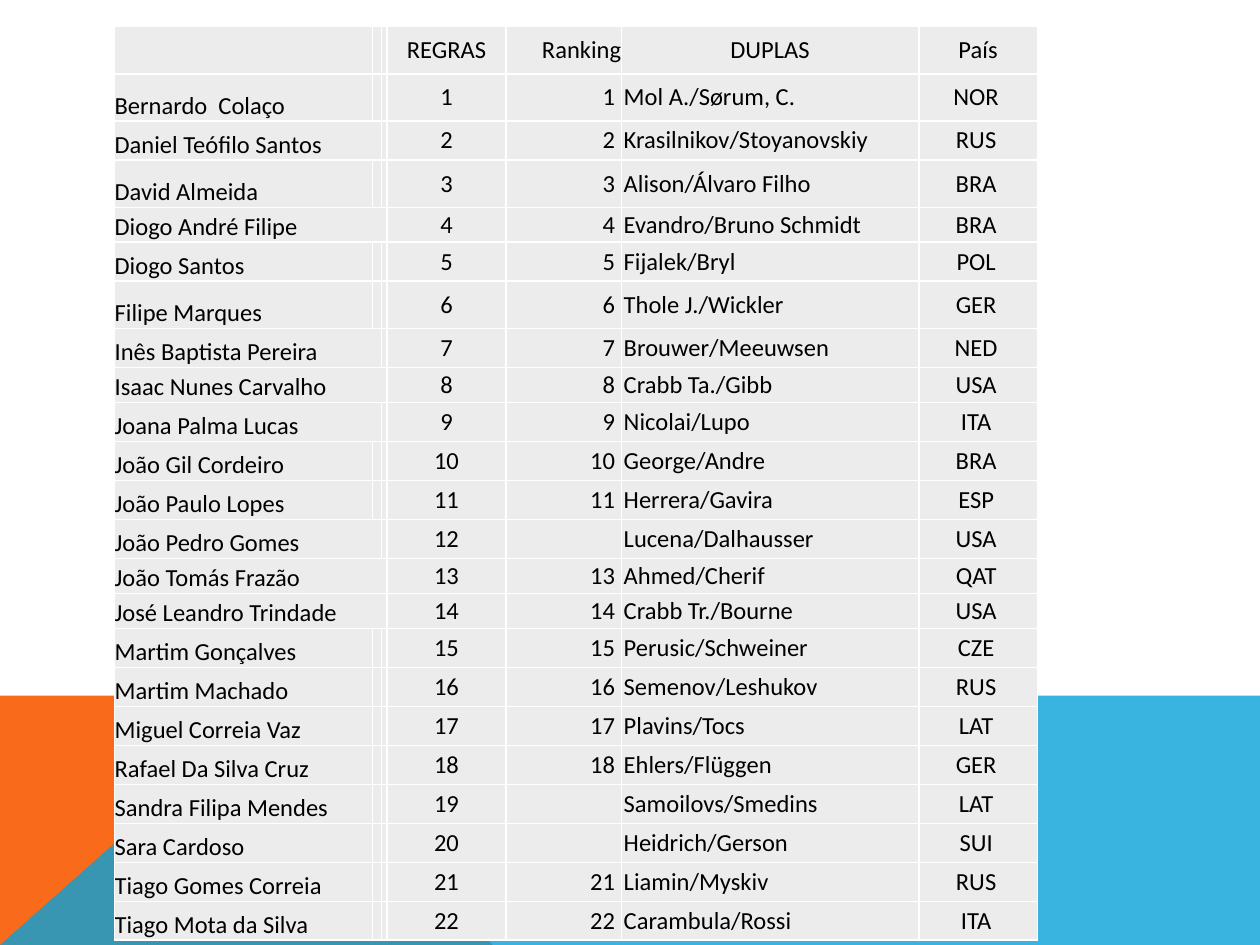
import pptx
import pptx.dml.color
import pptx.enum.text
import pptx.oxml
import pptx.oxml.ns
import pptx.util
from lxml import etree

Pt = pptx.util.Pt
qn = pptx.oxml.ns.qn
ALIGN = pptx.enum.text.PP_ALIGN
ANCHOR = pptx.enum.text.MSO_ANCHOR

ORANGE = pptx.dml.color.RGBColor(0xF9, 0x6A, 0x1B)
BLUE = pptx.dml.color.RGBColor(0x08, 0xA1, 0xD9)
GREY = pptx.dml.color.RGBColor(0xEC, 0xEC, 0xEC)
WHITE = pptx.dml.color.RGBColor(0xFF, 0xFF, 0xFF)
BLACK = pptx.dml.color.RGBColor(0, 0, 0)

# Page and band geometry, in points
PAGE_WIDTH, PAGE_HEIGHT = 720, 540
BAND_TOP = 397.5
PEAK_X = 160.5
ORANGE_END = 281.5

# Table geometry, in points
TABLE_LEFT, TABLE_TOP = 65.5, 15.2
COLUMN_WIDTHS = [147.4, 5.2, 3.2, 67.8, 66, 170, 67.8]
TALL, NORMAL, SHORT = 27, 22.3, 20
TALL_RULES = {1, 3, 6}
UNRANKED = {12, 19, 20}
FLUSH = (0, 0, 0, 0)
PADDED = (1.44, 1.44, 3.6, 1.44)

HEADERS = [
    ("REGRAS", ALIGN.CENTER),
    ("Ranking", ALIGN.RIGHT),
    ("DUPLAS", ALIGN.CENTER),
    ("País", ALIGN.CENTER),
]

# Student, columns the name spans, pair, country
ENTRIES = [
    ("Bernardo  Colaço", 1, "Mol A./Sørum, C.", "NOR"),
    ("Daniel Teófilo Santos", 2, "Krasilnikov/Stoyanovskiy", "RUS"),
    ("David Almeida", 1, "Alison/Álvaro Filho", "BRA"),
    ("Diogo André Filipe", 3, "Evandro/Bruno Schmidt", "BRA"),
    ("Diogo Santos", 1, "Fijalek/Bryl", "POL"),
    ("Filipe Marques", 1, "Thole J./Wickler", "GER"),
    ("Inês Baptista Pereira", 2, "Brouwer/Meeuwsen", "NED"),
    ("Isaac Nunes Carvalho", 3, "Crabb Ta./Gibb", "USA"),
    ("Joana Palma Lucas", 2, "Nicolai/Lupo", "ITA"),
    ("João Gil Cordeiro", 1, "George/Andre", "BRA"),
    ("João Paulo Lopes", 1, "Herrera/Gavira", "ESP"),
    ("João Pedro Gomes", 2, "Lucena/Dalhausser", "USA"),
    ("João Tomás Frazão", 3, "Ahmed/Cherif", "QAT"),
    ("José Leandro Trindade", 3, "Crabb Tr./Bourne", "USA"),
    ("Martim Gonçalves", 1, "Perusic/Schweiner", "CZE"),
    ("Martim Machado", 1, "Semenov/Leshukov", "RUS"),
    ("Miguel Correia Vaz", 1, "Plavins/Tocs", "LAT"),
    ("Rafael Da Silva Cruz", 1, "Ehlers/Flüggen", "GER"),
    ("Sandra Filipa Mendes", 1, "Samoilovs/Smedins", "LAT"),
    ("Sara Cardoso", 1, "Heidrich/Gerson", "SUI"),
    ("Tiago Gomes Correia", 1, "Liamin/Myskiv", "RUS"),
    ("Tiago Mota da Silva", 1, "Carambula/Rossi", "ITA"),
]


class SlideBuilder:
    """Holds the style and the current slide."""

    font = "Calibri"
    size = 14
    border = 1

    def __init__(self, slide):
        self.slide = slide

    def polygon(self, points, color, alpha=None):
        corners = [(Pt(x), Pt(y)) for x, y in points]
        builder = self.slide.shapes.build_freeform(*corners[0], scale=1.0)
        builder.add_line_segments(corners[1:], close=True)
        shape = builder.convert_to_shape()
        shape.shadow.inherit = False
        shape.fill.solid()
        shape.fill.fore_color.rgb = color
        shape.line.fill.background()
        if alpha is not None:
            tint = shape.fill._xPr.find(".//" + qn("a:srgbClr"))
            etree.SubElement(tint, qn("a:alpha"), val=str(alpha * 1000))

    def table(self, left, top, widths, heights):
        frame = self.slide.shapes.add_table(
            len(heights), len(widths), Pt(left), Pt(top),
            Pt(sum(widths)), Pt(sum(heights)))
        table = frame.table
        table.first_row = table.horz_banding = False
        for column, width in zip(table.columns, widths):
            column.width = Pt(width)
        for row, height in zip(table.rows, heights):
            row.height = Pt(height)
        for cell in table.iter_cells():
            self.blank_cell(cell)
        return table

    def blank_cell(self, cell):
        self.margins(cell, FLUSH)
        properties = cell._tc.get_or_add_tcPr()
        for side in ("lnL", "lnR", "lnT", "lnB"):
            line = etree.SubElement(properties, qn("a:" + side), w=str(Pt(self.border)))
            fill = etree.SubElement(line, qn("a:solidFill"))
            etree.SubElement(fill, qn("a:srgbClr"), val=str(WHITE))
        cell.fill.solid()
        cell.fill.fore_color.rgb = GREY
        # Keeps empty cells from stretching their row
        etree.SubElement(cell.text_frame.paragraphs[0]._p,
                         qn("a:endParaRPr"), sz=str(self.size * 100))

    def margins(self, cell, inset):
        (cell.margin_left, cell.margin_top,
         cell.margin_right, cell.margin_bottom) = map(Pt, inset)

    def cell_text(self, cell, text, align, inset=FLUSH, anchor=ANCHOR.MIDDLE):
        self.margins(cell, inset)
        cell.vertical_anchor = anchor
        paragraph = cell.text_frame.paragraphs[0]
        paragraph.text = text
        paragraph.alignment = align
        for run in paragraph.runs:
            run.font.name = self.font
            run.font.size = Pt(self.size)
            run.font.color.rgb = BLACK


def row_height(rule, span):
    if rule in TALL_RULES:
        return TALL
    return SHORT if span == 3 else NORMAL


def main():
    deck = pptx.Presentation()
    deck.slide_width, deck.slide_height = Pt(PAGE_WIDTH), Pt(PAGE_HEIGHT)
    builder = SlideBuilder(deck.slides.add_slide(deck.slide_layouts[6]))

    # Coloured bands at the foot
    builder.polygon([(0, PAGE_HEIGHT), (0, BAND_TOP), (PEAK_X, BAND_TOP),
                     (ORANGE_END, PAGE_HEIGHT)], ORANGE)
    builder.polygon([(0, PAGE_HEIGHT), (PEAK_X, BAND_TOP), (PAGE_WIDTH, BAND_TOP),
                     (PAGE_WIDTH, PAGE_HEIGHT)], BLUE, alpha=80)

    # Table grid and header
    heights = [TALL] + [row_height(rule, entry[1])
                        for rule, entry in enumerate(ENTRIES, 1)]
    ranking = builder.table(TABLE_LEFT, TABLE_TOP, COLUMN_WIDTHS, heights)
    for column, (title, align) in enumerate(HEADERS, 3):
        builder.cell_text(ranking.cell(0, column), title, align)

    # Students, rules and ranked pairs
    for rule, (student, span, pair, country) in enumerate(ENTRIES, 1):
        name_cell = ranking.cell(rule, 0)
        if span > 1:
            name_cell.merge(ranking.cell(rule, span - 1))
        builder.cell_text(name_cell, student, ALIGN.LEFT, anchor=ANCHOR.BOTTOM)
        builder.cell_text(ranking.cell(rule, 3), str(rule), ALIGN.CENTER)
        if rule not in UNRANKED:
            builder.cell_text(ranking.cell(rule, 4), str(rule), ALIGN.RIGHT, PADDED)
        builder.cell_text(ranking.cell(rule, 5), pair, ALIGN.LEFT, PADDED)
        builder.cell_text(ranking.cell(rule, 6), country, ALIGN.CENTER, PADDED)

    deck.save("out.pptx")


if __name__ == "__main__":
    main()
